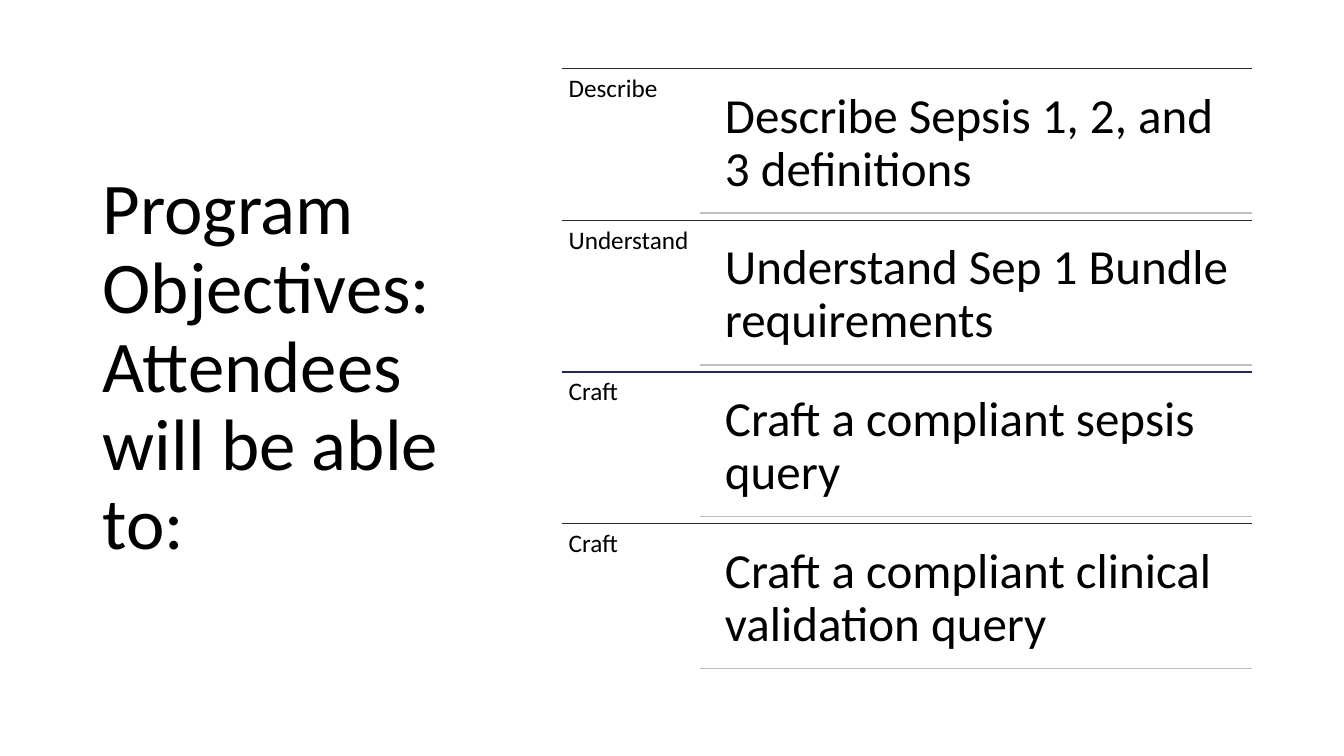
from dataclasses import dataclass

from lxml import etree
from pptx import Presentation
from pptx import util as u
from pptx.dml.color import RGBColor
from pptx.enum import shapes, text
from pptx.oxml import ns


@dataclass(frozen=True)
class Theme:
    font: str = "Calibri"
    ink: str = "000000"
    row_rule: str = "242852"
    detail_rule: str = "BEBEC3"
    title_size: int = 52
    keyword_size: int = 18
    detail_size: int = 35


theme = Theme()

prs = Presentation()
prs.slide_width, prs.slide_height = u.Inches(13.33), u.Inches(7.5)
slide = prs.slides.add_slide(prs.slide_layouts[6])


def add_words(words, box, size, inset=None, anchor=text.MSO_ANCHOR.TOP):
    frame = slide.shapes.add_textbox(*map(u.Inches, box)).text_frame
    frame_format = {"word_wrap": True, "vertical_anchor": anchor}
    if inset is not None:
        for side in ("left", "top", "right", "bottom"):
            frame_format[f"margin_{side}"] = u.Inches(inset)
    for name, value in frame_format.items():
        setattr(frame, name, value)
    paragraph = frame.paragraphs[0]
    paragraph.line_spacing = 0.9
    run = paragraph.add_run()
    run.text = words
    for name, value in {"name": theme.font, "size": u.Pt(size)}.items():
        setattr(run.font, name, value)
    run.font.color.rgb = RGBColor.from_string(theme.ink)


def add_rule(left, right, y, color):
    rule = slide.shapes.add_connector(
        shapes.MSO_CONNECTOR.STRAIGHT,
        u.Inches(left), u.Inches(y), u.Inches(right), u.Inches(y))
    rule.line.color.rgb = RGBColor.from_string(color)
    rule.line.width = u.Pt(1)
    etree.SubElement(rule._element.spPr, ns.qn("a:effectLst"))


# Title on the left
add_words("Program Objectives: Attendees will be able to:",
          (0.92, 0.61, 3.69, 6.09), theme.title_size,
          anchor=text.MSO_ANCHOR.MIDDLE)

# Objectives: keyword and detail, one row each
objectives = [
    ("Describe", "Describe Sepsis 1, 2, and 3 definitions"),
    ("Understand", "Understand Sep 1 Bundle requirements"),
    ("Craft", "Craft a compliant sepsis query"),
    ("Craft", "Craft a compliant clinical validation query"),
]
list_left, list_right = 5.57, 12.42
list_top, list_bottom = 0.68, 6.7
keyword_width = 1.37
detail_left = 7.04
detail_gap = 0.07
row_height = (list_bottom - list_top) / len(objectives)

for row, (keyword, detail) in enumerate(objectives):
    top = list_top + row * row_height
    add_rule(list_left, list_right, top, theme.row_rule)
    add_words(keyword, (list_left, top, keyword_width, row_height),
              theme.keyword_size, inset=0.07)
    add_words(detail,
              (detail_left, top + detail_gap,
               list_right - detail_left, row_height - 2 * detail_gap),
              theme.detail_size, inset=0.15)
    add_rule(list_left + keyword_width, list_right,
             top + row_height - detail_gap, theme.detail_rule)

prs.save("out.pptx")
